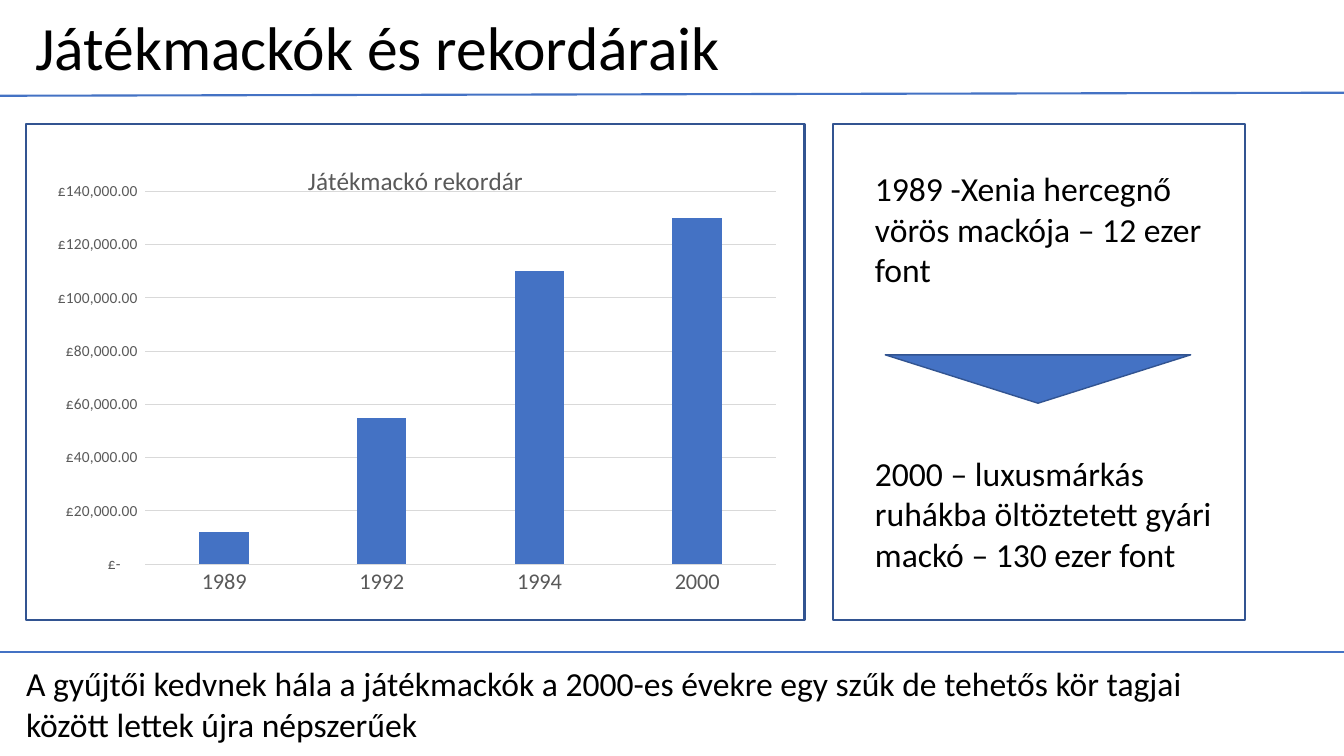
import pptx
import pptx.chart.data
import pptx.dml.color
import pptx.enum.chart
import pptx.enum.shapes
import pptx.enum.text
import pptx.oxml
import pptx.oxml.ns
import pptx.util

Inches, Pt = pptx.util.Inches, pptx.util.Pt
SHAPES = pptx.enum.shapes.MSO_SHAPE
COLORS = {"text": "000000", "accent": "4472C4", "outline": "325491",
          "label": "595959", "grid": "D9D9D9"}
POUNDS = (r'_-[$£-809]* #,##0.00_-;\-[$£-809]* #,##0.00_-;'
          r'_-[$£-809]* "-"??_-;_-@_-')


def rgb(name):
    return pptx.dml.color.RGBColor.from_string(COLORS[name])


def set_all(target, values):
    for key, value in values.items():
        setattr(target, key, value)


class SlideBuilder:
    """Holds the slide being filled and its typeface."""

    def __init__(self, slide, font="Calibri"):
        self.slide = slide
        self.font = font

    def style_font(self, font, size, color="text"):
        set_all(font, {"name": self.font, "size": Pt(size), "bold": False})
        font.color.rgb = rgb(color)

    def style_line(self, line, color, width):
        line.color.rgb = rgb(color)
        line.width = Pt(width)

    def text(self, box, paragraphs, size, gap=0, **frame_format):
        """Adds paragraphs that stand gap points apart."""
        frame = self.slide.shapes.add_textbox(*map(Inches, box)).text_frame
        set_all(frame, {"word_wrap": True, **frame_format})
        for index, words in enumerate(paragraphs):
            paragraph = frame.add_paragraph() if index else frame.paragraphs[0]
            paragraph.space_before = Pt(gap if index else 0)
            run = paragraph.add_run()
            run.text = words
            self.style_font(run.font, size)
        return frame

    def rule(self, start_y, end_y):
        """Draws a line across the whole slide."""
        rule = self.slide.shapes.add_connector(
            pptx.enum.shapes.MSO_CONNECTOR.STRAIGHT,
            0, Inches(start_y), Inches(13.33), Inches(end_y))
        self.style_line(rule.line, "accent", 1.5)
        properties = rule._element.spPr
        properties.append(pptx.oxml.parse_xml(
            f"<a:effectLst {pptx.oxml.ns.nsdecls('a')}/>"))

    def shape(self, kind, box, line_width, fill=None, rotation=0):
        shape = self.slide.shapes.add_shape(kind, *map(Inches, box))
        shape.shadow.inherit = False
        shape.rotation = rotation
        if fill:
            shape.fill.solid()
            shape.fill.fore_color.rgb = rgb(fill)
        else:
            shape.fill.background()
        self.style_line(shape.line, "outline", line_width)

    def column_chart(self, box, title, prices, plot_box):
        data = pptx.chart.data.CategoryChartData(number_format=POUNDS)
        data.categories = list(prices)
        data.add_series(title, list(prices.values()))
        chart = self.slide.shapes.add_chart(
            pptx.enum.chart.XL_CHART_TYPE.COLUMN_CLUSTERED,
            *map(Inches, box), data).chart
        self.style_font(chart.font, 10)
        set_all(chart, {"has_legend": False, "has_title": True})
        heading = chart.chart_title.text_frame
        heading.text = title
        self.style_font(heading.paragraphs[0].runs[0].font, 18, "label")

        columns = chart.plots[0]
        set_all(columns, {"gap_width": 219, "overlap": -27,
                          "vary_by_categories": False})
        columns.series[0].format.fill.solid()
        columns.series[0].format.fill.fore_color.rgb = rgb("accent")

        years, pounds = chart.category_axis, chart.value_axis
        no_tick = pptx.enum.chart.XL_TICK_MARK.NONE
        for axis, size in ((years, 16), (pounds, 11)):
            set_all(axis, {"major_tick_mark": no_tick,
                           "minor_tick_mark": no_tick})
            self.style_font(axis.tick_labels.font, size, "label")
        self.style_line(years.format.line, "grid", 0.75)
        set_all(pounds, {"minimum_scale": 0, "maximum_scale": 140000,
                         "major_unit": 20000, "has_major_gridlines": True})
        set_all(pounds.tick_labels, {"number_format": POUNDS,
                                     "number_format_is_linked": False})
        pounds.format.line.fill.background()
        self.style_line(pounds.major_gridlines.format.line, "grid", 0.75)
        self.place_plot(chart, plot_box)

    def place_plot(self, chart, plot_box):
        """Fixes the inner plot area, in fractions of the chart."""
        area = chart._chartSpace.chart.plotArea
        for layout in area.findall(pptx.oxml.ns.qn("c:layout")):
            area.remove(layout)
        sizes = "".join(f'<c:{key} val="{value}"/>'
                        for key, value in zip("xywh", plot_box))
        area.insert(0, pptx.oxml.parse_xml(
            f"<c:layout {pptx.oxml.ns.nsdecls('c')}><c:manualLayout>"
            '<c:layoutTarget val="inner"/><c:xMode val="edge"/>'
            f'<c:yMode val="edge"/>{sizes}</c:manualLayout></c:layout>'))


def main():
    deck = pptx.Presentation()
    set_all(deck, {"slide_width": Inches(13.33), "slide_height": Inches(7.5)})
    builder = SlideBuilder(deck.slides.add_slide(deck.slide_layouts[6]))
    grow = pptx.enum.text.MSO_AUTO_SIZE.SHAPE_TO_FIT_TEXT

    title = builder.text((0.25, -0.22, 11.5, 1.45),
                         ["Játékmackók és rekordáraik"], 44,
                         vertical_anchor=pptx.enum.text.MSO_ANCHOR.MIDDLE)
    title.paragraphs[0].line_spacing = 0.9
    builder.rule(0.95, 0.92)

    builder.column_chart(
        (0.44, 1.43, 7.36, 4.61), "Játékmackó rekordár",
        {"1989": 12000, "1992": 55000, "1994": 110000, "2000": 130000},
        (0.136, 0.102, 0.85, 0.802))
    for left, width in ((0.26, 7.72), (8.26, 4.09)):
        builder.shape(SHAPES.RECTANGLE, (left, 1.23, width, 4.92), 1.5)

    builder.text((8.58, 1.62, 3.87, 4.14),
                 ["1989 -Xenia hercegnő vörös mackója – 12 ezer font",
                  "2000 – luxusmárkás ruhákba öltöztetett gyári "
                  "mackó – 130 ezer font"],
                 24, gap=117, auto_size=grow)
    builder.shape(SHAPES.ISOSCELES_TRIANGLE, (8.78, 3.52, 3.03, 0.48), 1,
                  fill="accent", rotation=180)

    builder.rule(6.47, 6.47)
    builder.text((0.16, 6.53, 12.4, 0.91),
                 ["A gyűjtői kedvnek hála a játékmackók a 2000-es évekre egy "
                  "szűk de tehetős kör tagjai között lettek újra népszerűek"],
                 24, auto_size=grow)
    deck.save("out.pptx")


if __name__ == "__main__":
    main()
